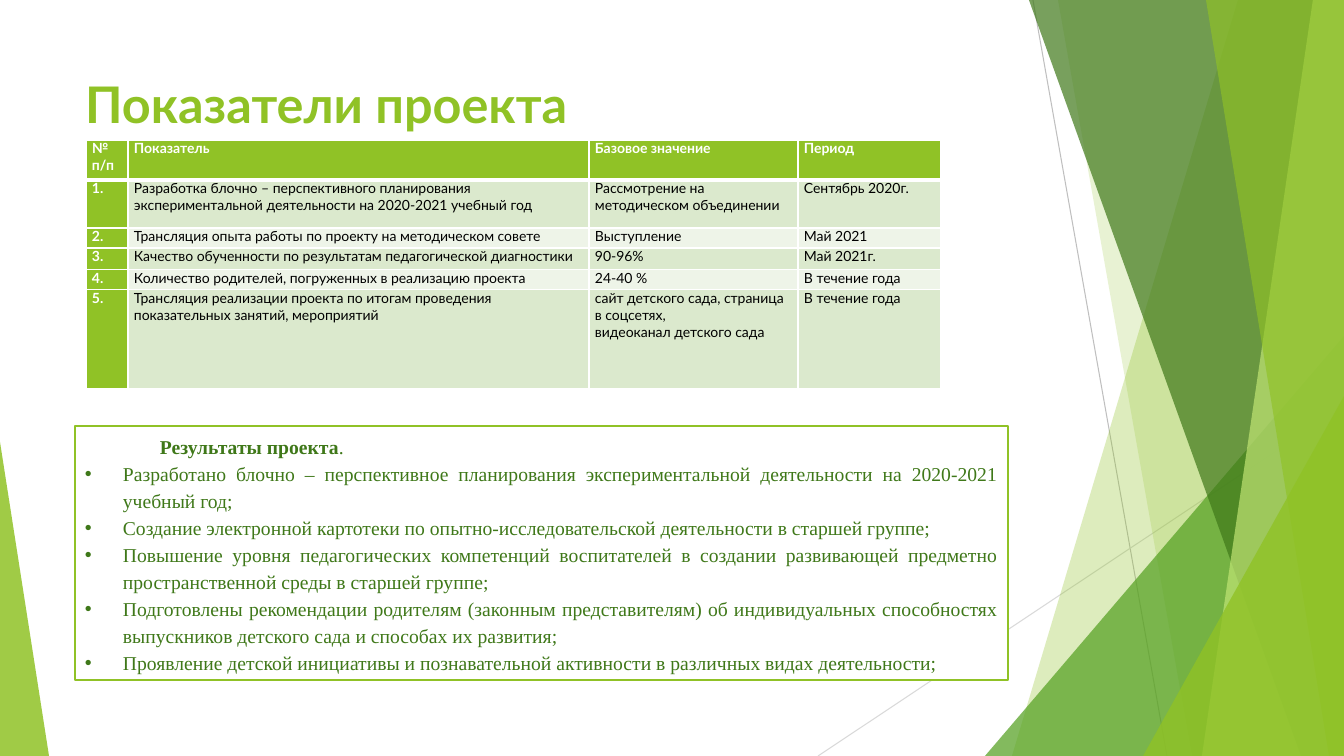
from dataclasses import dataclass

from lxml import etree
from pptx import Presentation
from pptx.dml.color import RGBColor
from pptx.enum.shapes import MSO_CONNECTOR, MSO_SHAPE
from pptx.enum.text import MSO_ANCHOR, MSO_AUTO_SIZE, PP_ALIGN
from pptx.oxml.ns import qn
from pptx.util import Emu, Pt

STRAIGHT = MSO_CONNECTOR.STRAIGHT
RECTANGLE, TRIANGLE = MSO_SHAPE.RECTANGLE, MSO_SHAPE.ISOSCELES_TRIANGLE
TOP = MSO_ANCHOR.TOP
NO_FIT, FIT_SHAPE = MSO_AUTO_SIZE.NONE, MSO_AUTO_SIZE.SHAPE_TO_FIT_TEXT
LEFT, JUSTIFY = PP_ALIGN.LEFT, PP_ALIGN.JUSTIFY
TITLE_ONLY = 5

EMU_PER_PX = 914400 / 100.8
WIDTH, HEIGHT = 1344, 756


@dataclass(frozen=True)
class Theme:
    lime: str = "90C226"
    pale_lime: str = "C0E474"
    green: str = "54A021"
    forest: str = "3F7819"
    white: str = "FFFFFF"
    black: str = "000000"
    odd_row: str = "DBE9CD"
    even_row: str = "EEF4E8"
    grey: str = "BFBFBF"
    light_grey: str = "D9D9D9"
    sans: str = "Lato"
    serif: str = "Times New Roman"
    title_size: int = 36
    table_size: int = 10
    results_size: int = 14


def px(length):
    return Emu(round(length * EMU_PER_PX))


def add_xml(parent, tag, **attributes):
    return etree.SubElement(parent, qn(tag), {k: str(v) for k, v in attributes.items()})


class SlideBuilder:
    def __init__(self, slide, theme):
        self.slide, self.shapes, self.theme = slide, slide.shapes, theme

    def style(self, paragraph, font_name, size, color, bold=False):
        for run in paragraph.runs:
            run.font.name, run.font.size, run.font.bold = font_name, Pt(size), bold
            run.font.color.rgb = RGBColor.from_string(color)

    def title(self, text, x, y, w, h):
        title = self.shapes.title
        title.left, title.top, title.width, title.height = map(px, (x, y, w, h))
        frame = title.text_frame
        frame.text = text
        frame.vertical_anchor, frame.auto_size, frame.word_wrap = TOP, NO_FIT, True
        frame.paragraphs[0].alignment = LEFT
        self.style(frame.paragraphs[0], self.theme.sans, self.theme.title_size,
                   self.theme.lime, bold=True)

    def line(self, start, end, color):
        line = self.shapes.add_connector(STRAIGHT, *map(px, start + end))
        line.line.color.rgb = RGBColor.from_string(color)
        line.line.width = Pt(0.75)
        add_xml(line.element.spPr, "a:effectLst")

    def tint(self, shape, color, opacity):
        """Fill a borderless shape; opacity is in percent."""
        shape.shadow.inherit = False
        shape.line.fill.background()
        shape.fill.solid()
        shape.fill.fore_color.rgb = RGBColor.from_string(color)
        fill_color = next(shape.element.spPr.iter(qn("a:srgbClr")))
        add_xml(fill_color, "a:alpha", val=opacity * 1000)

    def shard(self, top_x, bottom_x, color, opacity):
        """Full-height facet between a slanted left edge and the slide's right edge."""
        outline = self.shapes.build_freeform(top_x, 0, scale=EMU_PER_PX)
        outline.add_line_segments([(WIDTH, 0), (WIDTH, HEIGHT), (bottom_x, HEIGHT)])
        self.tint(outline.convert_to_shape(), color, opacity)

    def corner(self, x, y, w, apex, color, opacity):
        """Triangle standing on the slide's bottom edge."""
        triangle = self.shapes.add_shape(TRIANGLE, *map(px, (x, y, w, HEIGHT - y)))
        triangle.adjustments[0] = apex
        self.tint(triangle, color, opacity)

    def borders(self, cell, top, bottom):
        properties = cell._tc.get_or_add_tcPr()
        for side, points in (("L", 1), ("R", 1), ("T", top), ("B", bottom)):
            edge = add_xml(properties, f"a:ln{side}", w=Pt(points))
            add_xml(add_xml(edge, "a:solidFill"), "a:srgbClr", val=self.theme.white)

    def table(self, x, y, widths, heights, rows):
        theme = self.theme
        frame = self.shapes.add_table(len(rows), len(widths),
                                      *map(px, (x, y, sum(widths), sum(heights))))
        table = frame.table
        for column, width in zip(table.columns, widths):
            column.width = px(width)
        for r, (height, values) in enumerate(zip(heights, rows)):
            table.rows[r].height = px(height)
            for c, value in enumerate(values):
                cell = table.cell(r, c)
                heading = r == 0 or c == 0
                band = theme.odd_row if r % 2 else theme.even_row
                self.borders(cell, top=3 if r == 1 else 1, bottom=3 if r == 0 else 1)
                cell.fill.solid()
                cell.fill.fore_color.rgb = RGBColor.from_string(theme.lime if heading else band)
                cell.margin_left = cell.margin_right = px(6)
                cell.margin_top = cell.margin_bottom = 0
                cell.text_frame.text = value
                for paragraph in cell.text_frame.paragraphs:
                    self.style(paragraph, theme.sans, theme.table_size,
                               theme.white if heading else theme.black, heading)

    def results(self, x, y, w, h, heading, items):
        theme = self.theme
        box = self.shapes.add_shape(RECTANGLE, *map(px, (x, y, w, h)))
        box.shadow.inherit = False
        box.fill.solid()
        box.fill.fore_color.rgb = RGBColor.from_string(theme.white)
        box.line.color.rgb = RGBColor.from_string(theme.lime)
        box.line.width = Pt(1.5)
        frame = box.text_frame
        frame.text = "\n".join([heading, *items])
        frame.vertical_anchor, frame.auto_size, frame.word_wrap = TOP, FIT_SHAPE, True
        for paragraph in frame.paragraphs:
            properties = paragraph._p.get_or_add_pPr()
            if paragraph.text == heading:
                margin, indent = 50, 25
            else:
                margin, indent = 38, -38
                add_xml(properties, "a:buFont", typeface="Arial")
                add_xml(properties, "a:buChar", char="•")
                add_xml(add_xml(properties, "a:tabLst"), "a:tab", pos=px(50), algn="l")
            properties.set("marL", str(px(margin)))
            properties.set("indent", str(px(indent)))
            paragraph.alignment, paragraph.line_spacing = JUSTIFY, 1.15
            self.style(paragraph, theme.serif, theme.results_size, theme.forest)
        first = frame.paragraphs[0]
        first.runs[0].font.bold = True
        first.add_run().text = "."
        self.style(first, theme.serif, theme.results_size, theme.forest)
        first.runs[0].font.bold = True


INDICATORS = [
    ("№ п/п", "Показатель", "Базовое значение", "Период"),
    ("1.", "Разработка блочно – перспективного планирования экспериментальной "
     "деятельности на 2020-2021 учебный год",
     "Рассмотрение на методическом объединении", "Сентябрь 2020г."),
    ("2.", "Трансляция опыта работы по проекту на методическом совете",
     "Выступление", "Май 2021"),
    ("3.", "Качество обученности по результатам педагогической диагностики",
     "90-96%", "Май 2021г."),
    ("4.", "Количество родителей, погруженных в реализацию проекта",
     "24-40 %", "В течение года"),
    ("5.", "Трансляция реализации проекта по итогам проведения показательных "
     "занятий, мероприятий",
     "сайт детского сада, страница в соцсетях,\nвидеоканал детского сада", "В течение года"),
]

RESULTS = [
    "Разработано блочно – перспективное планирования экспериментальной деятельности "
    "на 2020-2021 учебный год;",
    "Создание электронной картотеки по опытно-исследовательской деятельности в старшей группе;",
    "Повышение уровня педагогических компетенций воспитателей в создании развивающей "
    "предметно пространственной среды в старшей группе;",
    "Подготовлены рекомендации родителям (законным представителям) об индивидуальных "
    "способностях выпускников детского сада и способах их развития;",
    "Проявление детской инициативы и познавательной активности в различных видах деятельности;",
]


def main():
    presentation = Presentation()
    presentation.slide_width, presentation.slide_height = px(WIDTH), px(HEIGHT)
    theme = Theme()
    slide = presentation.slides.add_slide(presentation.slide_layouts[TITLE_ONLY])
    builder = SlideBuilder(slide, theme)

    builder.line((1033, 0), (1167, HEIGHT), theme.grey)
    builder.line((WIDTH, 406), (818, HEIGHT), theme.light_grey)
    builder.shard(1238, 1012, theme.lime, 30)
    builder.shard(1058, 1192, theme.lime, 20)
    builder.corner(985, 336, 359, 1, theme.green, 72)
    builder.shard(1029, 1301, theme.forest, 70)
    builder.shard(1313, 1202, theme.pale_lime, 70)
    builder.shard(1206, 1329, theme.lime, 65)
    builder.corner(1143, 396, 201, 1, theme.lime, 80)
    builder.corner(0, 442, 49, 0, theme.lime, 85)

    builder.title("Показатели проекта", 75, 68, 948, 145)
    builder.table(86, 140, (42, 461, 209, 143), (40, 48, 20, 22, 20, 99), INDICATORS)
    builder.results(75, 426, 933, 254, "Результаты проекта", RESULTS)
    presentation.save("out.pptx")


if __name__ == "__main__":
    main()
